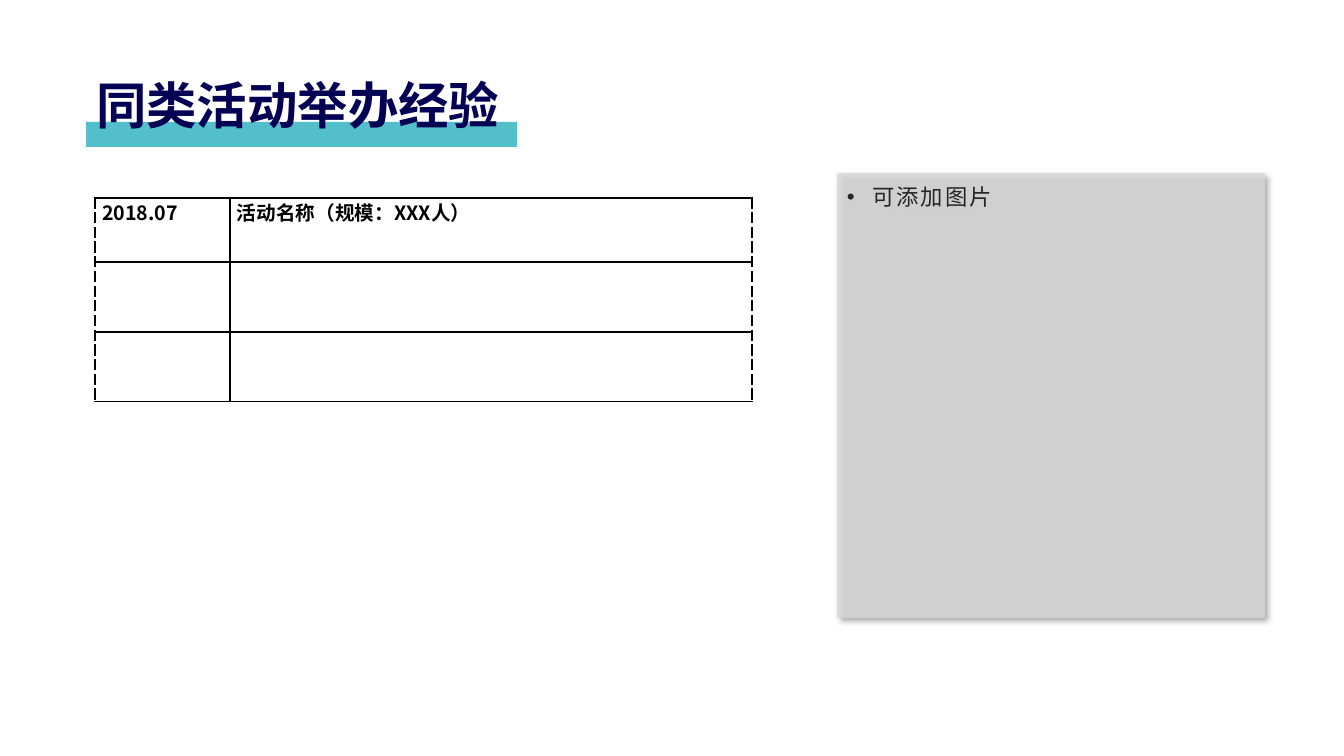
from lxml import etree
from pptx import Presentation, util as u
from pptx.dml.color import RGBColor
from pptx.enum import shapes, text
from pptx.oxml import parse_xml
from pptx.oxml.ns import nsdecls, qn

PX = 914400 / 100.8
SANS = "Noto Sans CJK SC"


def px(*lengths):
    return [u.Emu(round(length * PX)) for length in lengths]


def style(span, size, font, colour, bold=False):
    span.font.size = u.Pt(size)
    span.font.name = font
    span.font.bold = bold
    span.font.color.rgb = RGBColor.from_string(colour)
    east_asian = etree.SubElement(span.font._element, qn("a:ea"))
    east_asian.set("typeface", SANS)


deck = Presentation()
deck.slide_width, deck.slide_height = px(1344, 756)
page = deck.slides.add_slide(deck.slide_layouts[5])

title_bar = page.shapes.add_shape(shapes.MSO_SHAPE.RECTANGLE, *px(86, 122, 431, 25))
title_bar.shadow.inherit = False
title_bar.fill.solid()
title_bar.fill.fore_color.rgb = RGBColor.from_string("53BFCB")
title_bar.line.fill.background()

title = page.shapes.title
title.left, title.top, title.width, title.height = px(86, 84, 1196, 48)
title_bar._element.addnext(title._element)
title.text_frame.text = "同类活动举办经验"
title.text_frame.vertical_anchor = text.MSO_ANCHOR.MIDDLE
title.text_frame.auto_size = text.MSO_AUTO_SIZE.NONE
heading = title.text_frame.paragraphs[0]
heading.alignment = text.PP_ALIGN.LEFT
heading.line_spacing = 0.9
style(heading.runs[0], 36, "Arial", "040054", True)

panel = page.shapes.add_shape(shapes.MSO_SHAPE.RECTANGLE, *px(837, 173, 428, 445))
panel.fill.solid()
panel.fill.fore_color.rgb = RGBColor.from_string("D9D9D9")
panel_colour = panel._element.spPr.find(qn("a:solidFill"))[0]
etree.SubElement(panel_colour, qn("a:alpha")).set("val", "81000")
panel.line.fill.background()
panel._element.spPr.append(parse_xml(
    f'<a:effectLst {nsdecls("a")}><a:outerShdw blurRad="{u.Pt(4)}" dist="{u.Pt(3)}" '
    'dir="2700000" algn="tl" rotWithShape="0"><a:srgbClr val="000000">'
    '<a:alpha val="40000"/></a:srgbClr></a:outerShdw></a:effectLst>'))
panel.text_frame.text = "可添加图片"
panel.text_frame.word_wrap = True
panel.text_frame.vertical_anchor = text.MSO_ANCHOR.TOP
hint = panel.text_frame.paragraphs[0]
hint.alignment = text.PP_ALIGN.LEFT
hint.line_spacing = 1.2
hint.space_after = u.Pt(10)
hint_props = hint._element.get_or_add_pPr()
hint_props.set("marL", str(u.Inches(0.25)))
hint_props.set("indent", str(-u.Inches(0.25)))
etree.SubElement(hint_props, qn("a:buFont")).set("typeface", "Arial")
etree.SubElement(hint_props, qn("a:buChar")).set("char", "•")
style(hint.runs[0], 16, SANS, "262626")
hint.runs[0].font._element.set("spc", "150")

rows = [("2018.07", "活动名称（规模：XXX人）"), ("", ""), ("", "")]
column_widths = px(135, 522)
row_heights = px(64, 70, 70)
frame = page.shapes.add_table(len(rows), 2, *px(95, 198, 657, 204))
table = frame.table
table.first_row = table.horz_banding = False
for column, width in zip(table.columns, column_widths):
    column.width = width
for row, height in zip(table.rows, row_heights):
    row.height = height
for row_index, row in enumerate(rows):
    for column_index, words in enumerate(row):
        cell = table.cell(row_index, column_index)
        cell.margin_left = cell.margin_right = u.Inches(0.07)
        cell.margin_top = cell.margin_bottom = 0
        dashed_side = ("lnL", "lnR")[column_index]
        for side in ("lnL", "lnR", "lnT", "lnB"):
            dash = "dash" if side == dashed_side else "solid"
            cell._tc.get_or_add_tcPr().append(parse_xml(
                f'<a:{side} {nsdecls("a")} w="{u.Pt(1)}"><a:solidFill>'
                f'<a:srgbClr val="080000"/></a:solidFill><a:prstDash val="{dash}"/></a:{side}>'))
        cell.fill.background()
        if words:
            cell.text_frame.text = words
            style(cell.text_frame.paragraphs[0].runs[0], 14, SANS, "000000", True)

deck.save("out.pptx")
